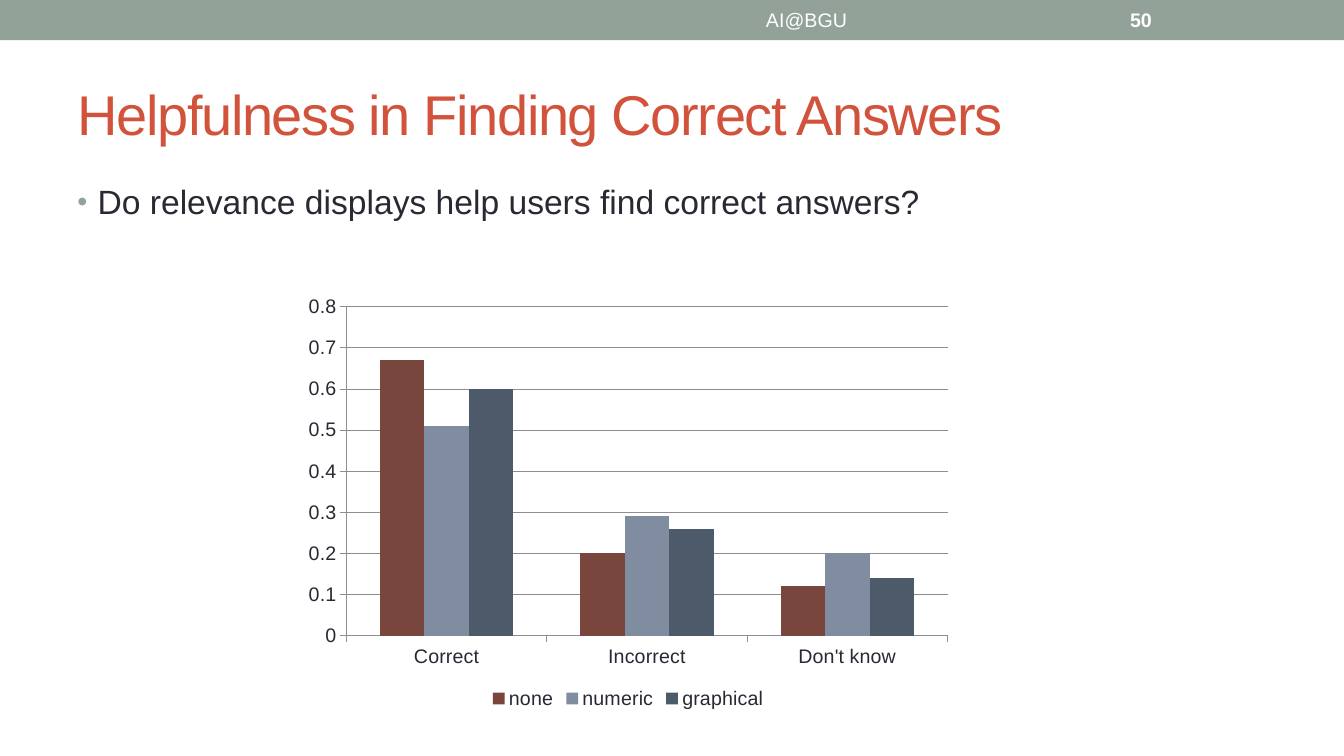
from lxml import etree
from pptx import Presentation
from pptx.chart.data import CategoryChartData
from pptx.dml.color import RGBColor
from pptx.enum.chart import XL_CHART_TYPE, XL_LEGEND_POSITION, XL_TICK_MARK
from pptx.enum.shapes import MSO_SHAPE
from pptx.enum.text import MSO_ANCHOR, PP_ALIGN
from pptx.oxml.ns import qn
from pptx.util import Inches, Pt

TITLE = "Helpfulness in Finding Correct Answers"
POINT = "Do relevance displays help users find correct answers?"
FOOTER = "AI@BGU"
NUMBER = "50"
GROUPS = ["Correct", "Incorrect", "Don't know"]
SERIES = [
    ("none", (0.67, 0.2, 0.12), "79463D"),
    ("numeric", (0.51, 0.29, 0.2), "808DA0"),
    ("graphical", (0.6, 0.26, 0.14), "4C5A6A"),
]
FONT = "Arial"
SAGE, RED, INK, WHITE, GRAY = "93A299", "D2533C", "292934", "FFFFFF", "8E8E90"


def paint(color, value):
    color.rgb = RGBColor.from_string(value)


def style(font, size, value, bold=False):
    font.name = FONT
    font.size = Pt(size)
    font.bold = bold
    paint(font.color, value)


def rule(line):
    line.width = Pt(0.75)
    paint(line.color, GRAY)


def write(shape, text, size, value, anchor, align=PP_ALIGN.LEFT, bold=False):
    frame = shape.text_frame
    frame.text = text
    frame.word_wrap = True
    frame.vertical_anchor = anchor
    line = frame.paragraphs[0]
    line.alignment = align
    style(line.runs[0].font, size, value, bold)
    return line


def place(shape, left, top, width, height):
    shape.left, shape.top = Inches(left), Inches(top)
    shape.width, shape.height = Inches(width), Inches(height)


def add_box(slide, left, top, width, height):
    return slide.shapes.add_textbox(
        Inches(left), Inches(top), Inches(width), Inches(height))


def add_bullet(line):
    props = line._p.get_or_add_pPr()
    props.set("marL", str(Inches(0.2)))
    props.set("indent", str(-Inches(0.2)))
    color = etree.SubElement(props, qn("a:buClr"))
    etree.SubElement(color, qn("a:srgbClr"), val=SAGE)
    etree.SubElement(props, qn("a:buSzPct"), val="85000")
    etree.SubElement(props, qn("a:buFont"), typeface=FONT)
    etree.SubElement(props, qn("a:buChar"), char="•")


def add_bars(slide):
    data = CategoryChartData()
    data.categories = GROUPS
    for name, values, _ in SERIES:
        data.add_series(name, values)
    chart = slide.shapes.add_chart(
        XL_CHART_TYPE.COLUMN_CLUSTERED, Inches(2.93), Inches(2.85),
        Inches(6.6), Inches(4.23), data).chart
    style(chart.font, 14, INK)
    chart.has_title = False
    chart.has_legend = True
    chart.legend.position = XL_LEGEND_POSITION.BOTTOM
    chart.legend.include_in_layout = False
    style(chart.legend.font, 14, INK)
    plot = chart.plots[0]
    plot.gap_width = 150
    plot.overlap = 0
    plot.vary_by_categories = False
    for bars, (_, _, value) in zip(plot.series, SERIES):
        bars.format.fill.solid()
        paint(bars.format.fill.fore_color, value)
    for axis in (chart.category_axis, chart.value_axis):
        axis.major_tick_mark = XL_TICK_MARK.OUTSIDE
        style(axis.tick_labels.font, 14, INK)
        rule(axis.format.line)
    scale = chart.value_axis
    scale.minimum_scale, scale.maximum_scale, scale.major_unit = 0, 0.8, 0.1
    scale.tick_labels.number_format = "General"
    scale.tick_labels.number_format_is_linked = False
    scale.has_major_gridlines = True
    rule(scale.major_gridlines.format.line)


def main():
    deck = Presentation()
    deck.slide_width, deck.slide_height = Inches(13.33), Inches(7.5)
    slide = deck.slides.add_slide(deck.slide_layouts[5])

    band = slide.shapes.add_shape(
        MSO_SHAPE.RECTANGLE, 0, 0, deck.slide_width, Inches(0.4))
    band.shadow.inherit = False
    band.fill.solid()
    paint(band.fill.fore_color, SAGE)
    band.line.fill.background()

    title = slide.shapes.title
    place(title, 0.67, 0.58, 12, 1.08)
    line = write(title, TITLE, 40, RED, MSO_ANCHOR.MIDDLE)
    line.runs[0].font._element.set("spc", "-100")

    body = add_box(slide, 0.67, 1.75, 12, 0.6)
    add_bullet(write(body, POINT, 24, INK, MSO_ANCHOR.TOP))

    add_bars(slide)

    write(add_box(slide, 5, 0.02, 6, 0.36), FOOTER, 14, WHITE,
          MSO_ANCHOR.MIDDLE, PP_ALIGN.CENTER)
    write(add_box(slide, 11.11, 0.02, 1.56, 0.36), NUMBER, 14, WHITE,
          MSO_ANCHOR.MIDDLE, bold=True)
    deck.save("out.pptx")


if __name__ == "__main__":
    main()
